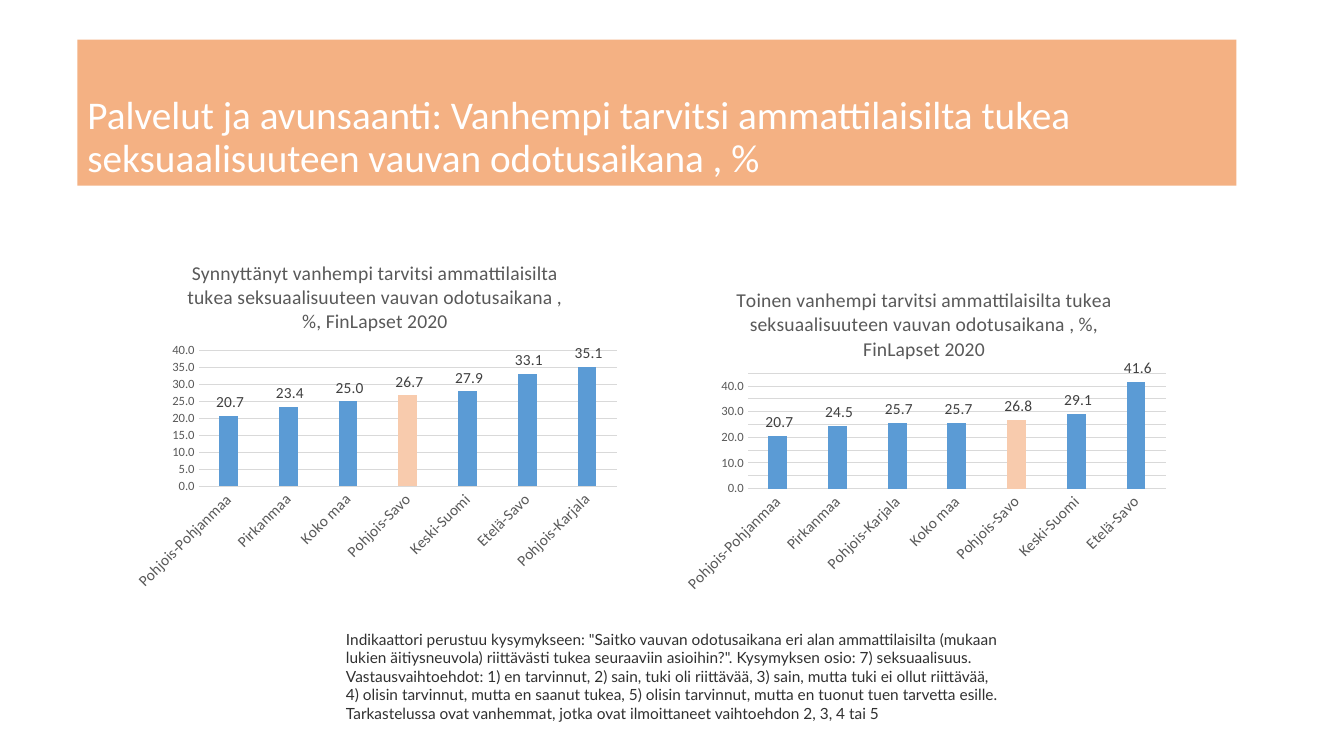
import pptx
import pptx.chart.data
import pptx.dml.color
import pptx.enum.chart
import pptx.enum.text
import pptx.oxml
import pptx.oxml.ns
import pptx.util

Cm = pptx.util.Cm
Pt = pptx.util.Pt
RGBColor = pptx.dml.color.RGBColor

WHITE = RGBColor(0xFF, 0xFF, 0xFF)
BANNER_ORANGE = RGBColor(0xF4, 0xB1, 0x83)
REGION_BLUE = RGBColor(0x5B, 0x9B, 0xD5)
HIGHLIGHT_PEACH = RGBColor(0xF8, 0xCB, 0xAD)
GRID_GREY = RGBColor(0xD9, 0xD9, 0xD9)
AXIS_GREY = RGBColor(0x59, 0x59, 0x59)
LABEL_GREY = RGBColor(0x40, 0x40, 0x40)
NOTE_GREY = RGBColor(0x30, 0x30, 0x30)

HIGHLIGHTED_REGION = "Pohjois-Savo"
PERCENT_FORMAT = r"#\ ##0.0"

HEADING = ("Palvelut ja avunsaanti: Vanhempi tarvitsi ammattilaisilta tukea "
           "seksuaalisuuteen vauvan odotusaikana , %")
CHART_HEADING = ("{} vanhempi tarvitsi ammattilaisilta tukea "
                 "seksuaalisuuteen vauvan odotusaikana , %, FinLapset 2020")
NOTE = (
    'Indikaattori perustuu kysymykseen: "Saitko vauvan odotusaikana eri alan '
    'ammattilaisilta (mukaan lukien äitiysneuvola) riittävästi tukea seuraaviin '
    'asioihin?". Kysymyksen osio: 7) seksuaalisuus. Vastausvaihtoehdot: '
    '1) en tarvinnut, 2) sain, tuki oli riittävää, 3) sain, mutta tuki ei ollut '
    'riittävää, 4) olisin tarvinnut, mutta en saanut tukea, 5) olisin tarvinnut, '
    'mutta en tuonut tuen tarvetta esille. Tarkastelussa ovat vanhemmat, jotka '
    'ovat ilmoittaneet vaihtoehdon 2, 3, 4 tai 5')

BIRTH_PARENT = {
    "Pohjois-Pohjanmaa": 20.7, "Pirkanmaa": 23.4, "Koko maa": 25.0,
    "Pohjois-Savo": 26.7, "Keski-Suomi": 27.9, "Etelä-Savo": 33.1,
    "Pohjois-Karjala": 35.1}
OTHER_PARENT = {
    "Pohjois-Pohjanmaa": 20.7, "Pirkanmaa": 24.5, "Pohjois-Karjala": 25.7,
    "Koko maa": 25.7, "Pohjois-Savo": 26.8, "Keski-Suomi": 29.1,
    "Etelä-Savo": 41.6}


def format_font(font, size, color, name="Calibri"):
    font.size = Pt(size)
    font.name = name
    font.bold = False
    font.color.rgb = color


def write_text(frame, text, size, color, name="Calibri", align=None, spacing=None):
    paragraph = frame.paragraphs[0]
    paragraph.alignment = align
    paragraph.line_spacing = spacing
    run = paragraph.add_run()
    run.text = text
    format_font(run.font, size, color, name)


def place(shape, box):
    shape.left, shape.top, shape.width, shape.height = (Cm(length) for length in box)


def add_banner(slide, box):
    banner = slide.shapes.title
    place(banner, box)
    banner.fill.solid()
    banner.fill.fore_color.rgb = BANNER_ORANGE
    frame = banner.text_frame
    frame.word_wrap = True
    frame.auto_size = pptx.enum.text.MSO_AUTO_SIZE.NONE
    frame.vertical_anchor = pptx.enum.text.MSO_ANCHOR.BOTTOM
    write_text(frame, HEADING, size=28, color=WHITE, spacing=0.9,
               align=pptx.enum.text.PP_ALIGN.LEFT)


def set_plot_layout(chart, x, y, w, h):
    """Fix the inner plot area, given as fractions of the chart."""
    plot_area = chart.plots[0]._element.getparent()
    for layout in plot_area.findall(pptx.oxml.ns.qn("c:layout")):
        plot_area.remove(layout)
    plot_area.insert(0, pptx.oxml.parse_xml(
        f'<c:layout {pptx.oxml.ns.nsdecls("c")}><c:manualLayout>'
        '<c:layoutTarget val="inner"/><c:xMode val="edge"/><c:yMode val="edge"/>'
        f'<c:x val="{x}"/><c:y val="{y}"/><c:w val="{w}"/><c:h val="{h}"/>'
        '</c:manualLayout></c:layout>'))


def format_axes(chart, maximum):
    tick_none = pptx.enum.chart.XL_TICK_MARK.NONE
    for axis, size in ((chart.category_axis, 11), (chart.value_axis, 9)):
        axis.major_tick_mark = axis.minor_tick_mark = tick_none
        format_font(axis.tick_labels.font, size, AXIS_GREY)

    regions = chart.category_axis
    regions.has_major_gridlines = False
    regions.format.line.color.rgb = GRID_GREY
    regions.format.line.width = Pt(0.75)
    body = regions._element.find(".//" + pptx.oxml.ns.qn("a:bodyPr"))
    body.set("rot", "-2700000")
    body.set("vert", "horz")

    percent = chart.value_axis
    percent.minimum_scale, percent.maximum_scale = 0, maximum
    percent.major_unit = 5
    percent.format.line.fill.background()
    percent.major_gridlines.format.line.color.rgb = GRID_GREY
    percent.major_gridlines.format.line.width = Pt(0.75)
    percent.tick_labels.number_format = PERCENT_FORMAT
    percent.tick_labels.number_format_is_linked = False


def add_region_chart(slide, box, parent, shares, maximum, plot_top, plot_height):
    data = pptx.chart.data.CategoryChartData(number_format=PERCENT_FORMAT)
    data.categories = list(shares)
    data.add_series("Series 1", list(shares.values()))
    chart = slide.shapes.add_chart(
        pptx.enum.chart.XL_CHART_TYPE.COLUMN_CLUSTERED,
        *(Cm(length) for length in box), data).chart
    chart.has_legend = False
    chart.font.size = Pt(10)
    chart.font.name = "Calibri"
    chart.has_title = True
    chart.chart_title.include_in_layout = False
    write_text(chart.chart_title.text_frame, CHART_HEADING.format(parent),
               size=14, color=AXIS_GREY)
    format_axes(chart, maximum)
    set_plot_layout(chart, 0.15, plot_top, 0.83, plot_height)

    plot = chart.plots[0]
    plot.gap_width, plot.overlap = 219, -27
    plot.vary_by_categories = False
    columns = plot.series[0]
    highlighted = columns.points[list(shares).index(HIGHLIGHTED_REGION)]
    for part, color in ((columns, REGION_BLUE), (highlighted, HIGHLIGHT_PEACH)):
        part.format.fill.solid()
        part.format.fill.fore_color.rgb = color

    labels = columns.data_labels
    labels.show_value = True
    labels.position = pptx.enum.chart.XL_LABEL_POSITION.OUTSIDE_END
    labels.number_format = PERCENT_FORMAT
    labels.number_format_is_linked = False
    format_font(labels.font, 11, LABEL_GREY)


def add_note(slide, box):
    frame = slide.shapes.add_textbox(*(Cm(length) for length in box)).text_frame
    frame.word_wrap = True
    frame.auto_size = pptx.enum.text.MSO_AUTO_SIZE.SHAPE_TO_FIT_TEXT
    write_text(frame, NOTE, size=11, color=NOTE_GREY, name="Lato")


def main():
    deck = pptx.Presentation()
    deck.slide_width, deck.slide_height = Cm(33.87), Cm(19.05)
    slide = deck.slides.add_slide(deck.slide_layouts[5])
    add_banner(slide, (1.95, 1, 29.21, 3.68))
    add_region_chart(slide, (3.1, 6.12, 12.7, 9.02), "Synnyttänyt", BIRTH_PARENT,
                     maximum=40, plot_top=0.3, plot_height=0.38)
    add_region_chart(slide, (16.94, 6.83, 12.7, 8.31), "Toinen", OTHER_PARENT,
                     maximum=45, plot_top=0.31, plot_height=0.35)
    add_note(slide, (8.47, 15.75, 16.94, 3.07))
    deck.save("out.pptx")


if __name__ == "__main__":
    main()
